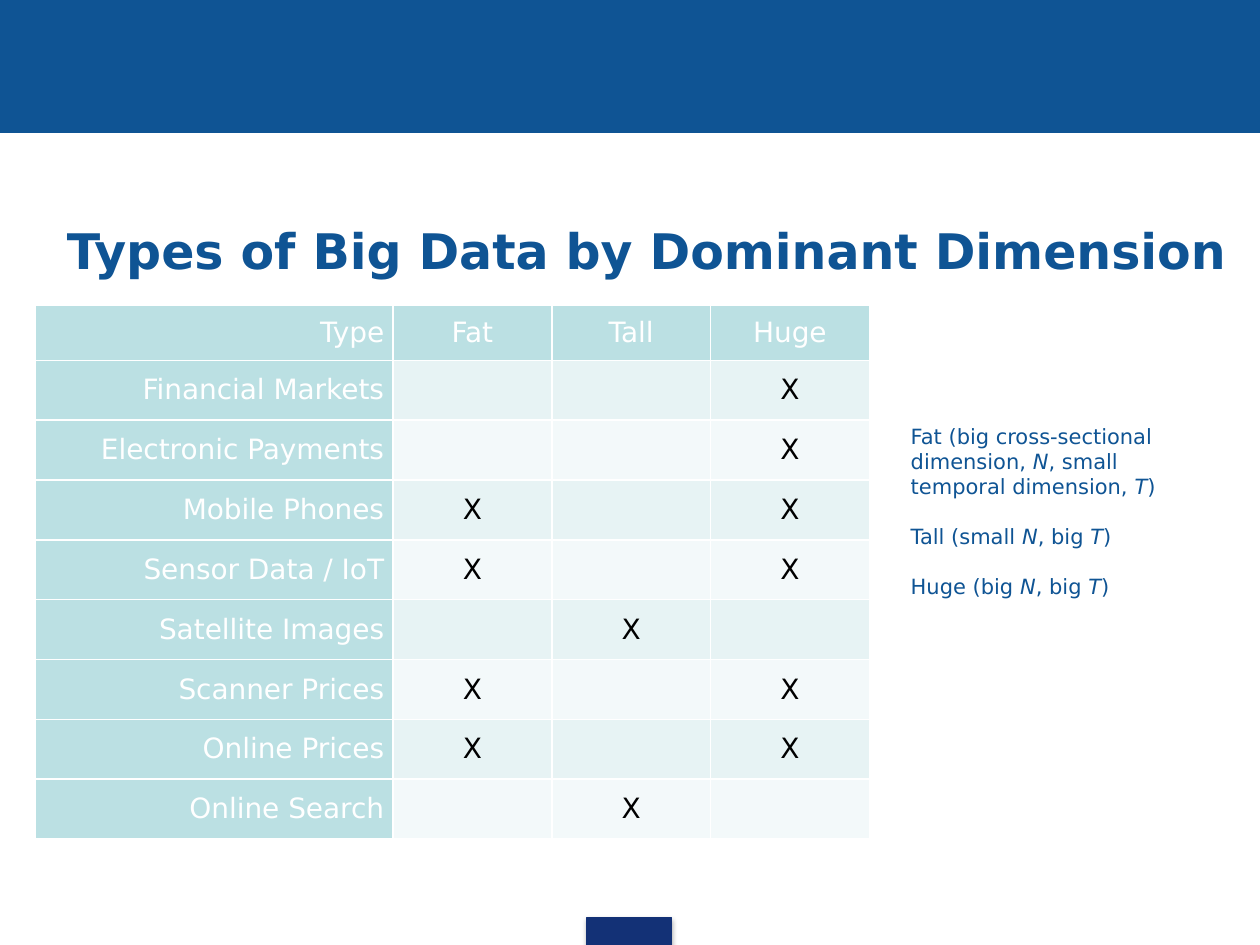
from lxml import etree
from pptx import Presentation
from pptx.dml.color import RGBColor
from pptx.enum.shapes import MSO_SHAPE
from pptx.enum.text import MSO_ANCHOR, MSO_AUTO_SIZE, PP_ALIGN
from pptx.oxml import parse_xml
from pptx.oxml.ns import nsdecls
from pptx.util import Inches, Pt

RECTANGLE = MSO_SHAPE.RECTANGLE
MIDDLE = MSO_ANCHOR.MIDDLE
LEFT, CENTER, RIGHT = PP_ALIGN.LEFT, PP_ALIGN.CENTER, PP_ALIGN.RIGHT

BLUE = RGBColor(0x0F, 0x54, 0x94)
NAVY = RGBColor(0x13, 0x31, 0x76)
TEAL = RGBColor(0xBB, 0xE0, 0xE3)
BAND_DARK = RGBColor(0xE7, 0xF3, 0xF4)
BAND_LIGHT = RGBColor(0xF3, 0xF9, 0xFA)
WHITE = RGBColor(0xFF, 0xFF, 0xFF)
BLACK = RGBColor(0x00, 0x00, 0x00)
FONT = "DejaVu Sans"

COLUMNS = ["Type", "Fat", "Tall", "Huge"]
DATA_TYPES = {
    "Financial Markets": ["Huge"],
    "Electronic Payments": ["Huge"],
    "Mobile Phones": ["Fat", "Huge"],
    "Sensor Data / IoT": ["Fat", "Huge"],
    "Satellite Images": ["Tall"],
    "Scanner Prices": ["Fat", "Huge"],
    "Online Prices": ["Fat", "Huge"],
    "Online Search": ["Tall"],
}
NOTES = [
    "Fat (big cross-sectional dimension, *N*, small temporal dimension, *T*)",
    "Tall (small *N*, big *T*)",
    "Huge (big *N*, big *T*)",
]


def write_text(paragraph, text, size, color, align=LEFT, bold=False, before=0, after=0):
    """Write text into a paragraph; parts between asterisks are italic."""
    paragraph.alignment = align
    paragraph.space_before, paragraph.space_after = Pt(before), Pt(after)
    for index, part in enumerate(text.split("*")):
        run = paragraph.add_run()
        run.text = part
        run.font.name, run.font.size = FONT, Pt(size)
        run.font.bold, run.font.italic = bold, index % 2 == 1
        run.font.color.rgb = color


presentation = Presentation()
presentation.slide_width, presentation.slide_height = Inches(10), Inches(7.5)
slide = presentation.slides.add_slide(presentation.slide_layouts[5])
width, height = presentation.slide_width, presentation.slide_height

# Top banner and bottom tab
banner = slide.shapes.add_shape(RECTANGLE, 0, 0, width, int(height * 0.14))
tab = slide.shapes.add_shape(
    RECTANGLE, Inches(4.66), Inches(7.28), Inches(0.67), Inches(0.22))
for shape, color in ((banner, BLUE), (tab, NAVY)):
    shape.shadow.inherit = False
    shape.fill.solid()
    shape.fill.fore_color.rgb = color
    shape.line.color.rgb = color
    shape.line.width = Pt(0.75)

# Soft shadow below the tab
effects = tab.element.spPr.find("{*}effectLst")
effects.append(parse_xml(
    f'<a:outerShdw {nsdecls("a")} blurRad="{Pt(3.1)}" dist="{Pt(1.8)}" dir="5400000" '
    'rotWithShape="0"><a:srgbClr val="000000"><a:alpha val="35000"/></a:srgbClr>'
    '</a:outerShdw>'))

# Title
title = slide.shapes.title
title.left, title.top = Inches(0.43), Inches(1.47)
title.width, title.height = Inches(9.84), Inches(1.02)
title.text_frame.auto_size = MSO_AUTO_SIZE.NONE
title.text_frame.vertical_anchor = MIDDLE
write_text(title.text_frame.paragraphs[0], "Types of Big Data by Dominant Dimension",
           size=28, color=BLUE, bold=True)

# Table of data types
TYPE_WIDTH, MARK_WIDTH = Inches(2.84), Inches(1.26)
HEADER_HEIGHT, ROW_HEIGHT = Inches(0.44), Inches(0.475)
table = slide.shapes.add_table(
    len(DATA_TYPES) + 1, len(COLUMNS), Inches(0.28), Inches(2.42),
    TYPE_WIDTH + 3 * MARK_WIDTH, HEADER_HEIGHT + len(DATA_TYPES) * ROW_HEIGHT).table
for index, column in enumerate(table.columns):
    column.width = MARK_WIDTH if index else TYPE_WIDTH
for index, row in enumerate(table.rows):
    row.height = ROW_HEIGHT if index else HEADER_HEIGHT

rows = [COLUMNS]
for name, dimensions in DATA_TYPES.items():
    rows.append([name] + ["X" if column in dimensions else "" for column in COLUMNS[1:]])

for row_index, texts in enumerate(rows):
    for column_index, text in enumerate(texts):
        cell = table.cell(row_index, column_index)
        is_heading = row_index == 0 or column_index == 0
        cell.vertical_anchor = MIDDLE
        cell.margin_left = cell.margin_right = Inches(0.07)
        cell.margin_top = cell.margin_bottom = 0
        properties = cell._tc.get_or_add_tcPr()
        for side in ("lnL", "lnR", "lnT", "lnB"):
            border = etree.fromstring(
                f'<a:{side} {nsdecls("a")} w="{Pt(1)}"><a:solidFill>'
                f'<a:srgbClr val="{WHITE}"/></a:solidFill></a:{side}>')
            properties.append(border)
        cell.fill.solid()
        band = BAND_DARK if row_index % 2 else BAND_LIGHT
        cell.fill.fore_color.rgb = TEAL if is_heading else band
        if text:
            write_text(cell.text_frame.paragraphs[0], text, size=16,
                       color=WHITE if is_heading else BLACK,
                       align=CENTER if column_index else RIGHT, before=2, after=2)

# Notes on the dimensions
notes = slide.shapes.add_textbox(
    Inches(7.13), Inches(3.31), Inches(2.44), Inches(1.51)).text_frame
notes.word_wrap = True
for index, note in enumerate(NOTES):
    paragraph = notes.add_paragraph() if index else notes.paragraphs[0]
    write_text(paragraph, note, size=12, color=BLUE, before=14 if index else 0)

presentation.save("out.pptx")
